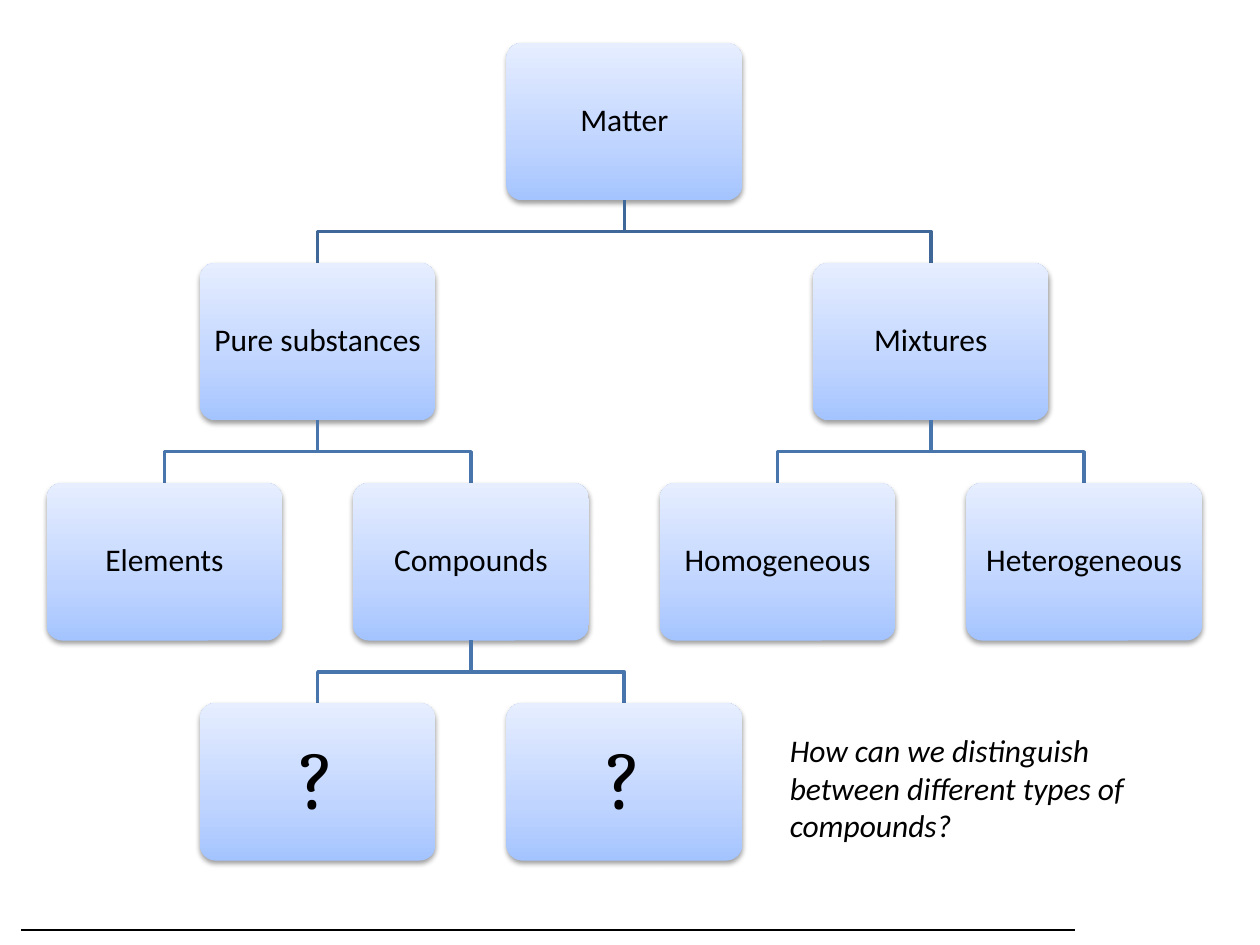
import copy

import pptx
import pptx.dml.color
import pptx.enum.shapes
import pptx.enum.text
import pptx.oxml
import pptx.oxml.ns
import pptx.oxml.xmlchemy
import pptx.util

Inches = pptx.util.Inches
Pt = pptx.util.Pt
RGBColor = pptx.dml.color.RGBColor
qn = pptx.oxml.ns.qn

BLACK = RGBColor(0x00, 0x00, 0x00)
TRUNK = RGBColor(0x3F, 0x67, 0x97)
BRANCH = RGBColor(0x48, 0x75, 0xAC)
SHADES = (
    (0, RGBColor(0xA4, 0xC4, 0xFF)),
    (0.35, RGBColor(0xBF, 0xD4, 0xFF)),
    (1, RGBColor(0xE6, 0xEE, 0xFF)),
)
SHADOW = (
    f'<a:outerShdw {pptx.oxml.ns.nsdecls("a")} blurRad="{Pt(3.1)}" '
    f'dist="{Pt(1.6)}" dir="5400000" rotWithShape="0">'
    '<a:srgbClr val="000000"><a:alpha val="38000"/></a:srgbClr></a:outerShdw>'
)

WIDTH, HEIGHT = Inches(1.87), Inches(1.25)
COLS, ROWS = 6, 3

TREE = ("Matter", 3, [
    ("Pure substances", 1, [
        ("Elements", 0, []),
        ("Compounds", 2, [("?", 1, []), ("?", 3, [])]),
    ]),
    ("Mixtures", 5, [
        ("Homogeneous", 4, []),
        ("Heterogeneous", 6, []),
    ]),
])


def add_run(para, text, size, face="Calibri", italic=None):
    run = para.add_run()
    run.text = text
    run.font.size = Pt(size)
    run.font.name = face
    run.font.italic = italic
    run.font.color.rgb = BLACK


def add_shade(card):
    card.fill.gradient()
    card.fill.gradient_angle = 90
    stops = card._element.spPr.find(".//" + qn("a:gsLst"))
    stops.insert(1, copy.deepcopy(stops[0]))
    for stop, (place, color) in zip(card.fill.gradient_stops, SHADES):
        stop.position = place
        stop.color.rgb = color
    card.shadow.inherit = False
    effects = card._element.spPr.find(qn("a:effectLst"))
    effects.append(pptx.oxml.parse_xml(SHADOW))


def add_card(slide, left, top, text):
    card = slide.shapes.add_shape(
        pptx.enum.shapes.MSO_SHAPE.ROUNDED_RECTANGLE, left, top, WIDTH, HEIGHT)
    card.adjustments[0] = 0.1
    card.line.fill.background()
    add_shade(card)
    frame = card.text_frame
    frame.word_wrap = True
    frame.vertical_anchor = pptx.enum.text.MSO_ANCHOR.MIDDLE
    frame.margin_left = frame.margin_right = Inches(0.07)
    frame.margin_top = frame.margin_bottom = Inches(0.07)
    para = frame.paragraphs[0]
    para.alignment = pptx.enum.text.PP_ALIGN.CENTER
    para.line_spacing = 0.9
    if text == "?":
        add_run(para, text, 48, "Cambria")
    else:
        add_run(para, text, 18)


def add_elbow(slide, start, end, color):
    (x1, y1), (x2, y2) = start, end
    middle = (y1 + y2) // 2
    path = slide.shapes.build_freeform(x1, y1)
    path.add_line_segments([(x1, middle), (x2, middle), (x2, y2)], close=False)
    elbow = path.convert_to_shape()
    elbow.fill.background()
    elbow.line.color.rgb = color
    elbow.line.width = Pt(2)
    elbow.shadow.inherit = False


def add_tree(slide, left, top, width, height, tree):
    across = (width - WIDTH) / COLS
    down = (height - HEIGHT) / ROWS

    def place(node, row):
        text, col, kids = node
        x, y = int(left + col * across), int(top + row * down)
        add_card(slide, x, y, text)
        start = (x + WIDTH // 2, y + HEIGHT)
        for kid in kids:
            end = (int(left + kid[1] * across) + WIDTH // 2,
                   int(top + (row + 1) * down))
            add_elbow(slide, start, end, BRANCH if row else TRUNK)
            place(kid, row + 1)

    place(tree, 0)


def add_prompt(slide, left, top, width, height, text):
    frame = slide.shapes.add_textbox(left, top, width, height).text_frame
    frame.word_wrap = True
    add_run(frame.paragraphs[0], text, 18, italic=True)


def add_rule(slide, left, top, width):
    rule = slide.shapes.add_connector(
        pptx.enum.shapes.MSO_CONNECTOR.STRAIGHT, left, top, left + width, top)
    rule.line.color.rgb = BLACK
    rule.line.width = Pt(0.75)
    rule._element.spPr.append(pptx.oxml.xmlchemy.OxmlElement("a:effectLst"))


def main():
    deck = pptx.Presentation()
    deck.slide_width, deck.slide_height = Inches(10), Inches(7.5)
    slide = deck.slides.add_slide(deck.slide_layouts[6])
    add_rule(slide, Inches(0.17), Inches(7.38), Inches(8.36))
    add_tree(slide, Inches(0.37), Inches(0.34), Inches(9.17), Inches(6.49), TREE)
    add_prompt(slide, Inches(6.17), Inches(5.75), Inches(3.5), Inches(1.01),
               "How can we distinguish between different types of compounds?")
    deck.save("out.pptx")


if __name__ == "__main__":
    main()
